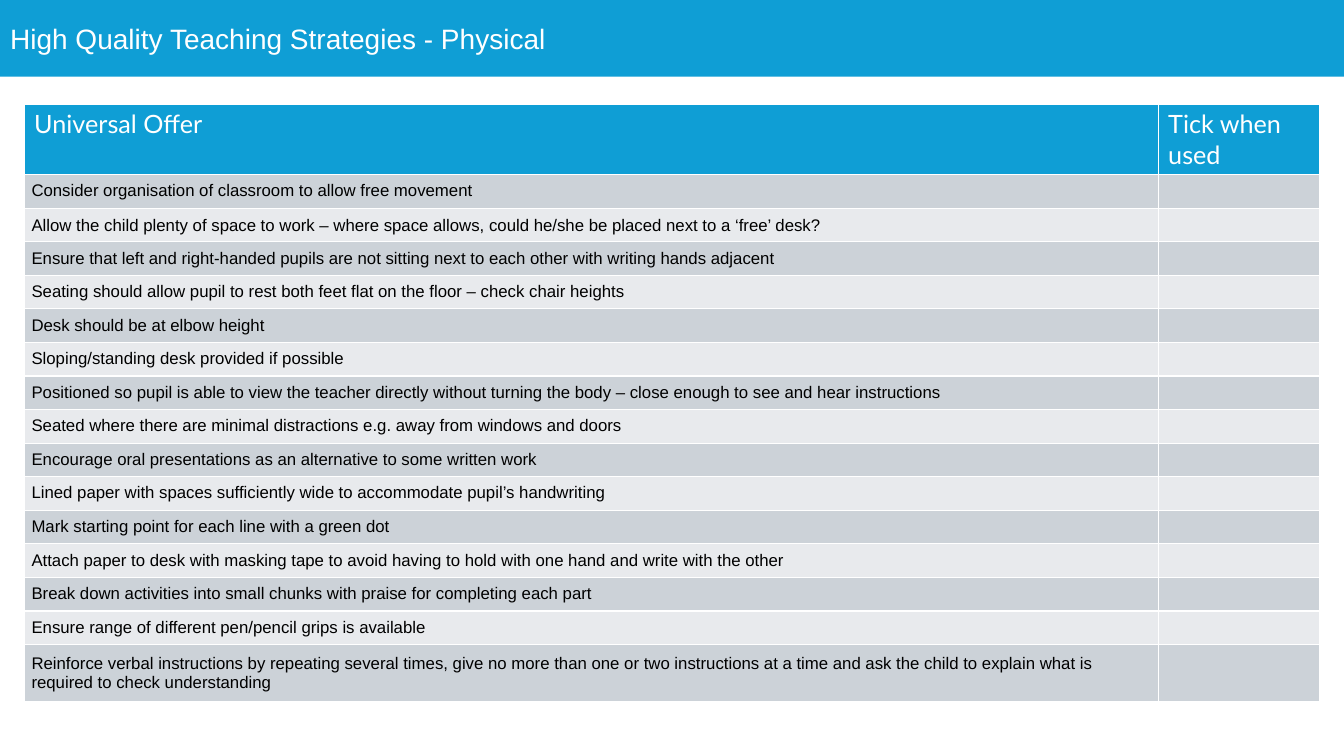
from pptx import Presentation
from pptx.dml.color import RGBColor
from pptx.enum.text import MSO_ANCHOR, MSO_AUTO_SIZE, PP_ALIGN
from pptx.util import Pt

PX = 9525  # EMU per px, 96 px to the inch

THEME = {
    "blue": RGBColor(0x0F, 0x9E, 0xD5),
    "bands": [RGBColor(0xCC, 0xD2, 0xD8), RGBColor(0xE8, 0xEA, 0xED)],
    "title": {"name": "Arial", "size": Pt(20), "bold": False, "color": RGBColor(255, 255, 255)},
    "header": {"name": "Lato", "size": Pt(18), "bold": False, "color": RGBColor(255, 255, 255)},
    "body": {"name": "Arial", "size": Pt(12), "bold": False, "color": RGBColor(0, 0, 0)},
}

HEADERS = ["Universal Offer", "Tick when used"]
TIGHT, LOOSE = Pt(12.8), Pt(13.8)
STRATEGIES = [
    ("Consider organisation of classroom to allow free movement", TIGHT),
    ("Allow the child plenty of space to work – where space allows, could he/she be placed "
     "next to a ‘free’ desk?", LOOSE),
    ("Ensure that left and right-handed pupils are not sitting next to each other with "
     "writing hands adjacent", LOOSE),
    ("Seating should allow pupil to rest both feet flat on the floor – check chair heights", TIGHT),
    ("Desk should be at elbow height", TIGHT),
    ("Sloping/standing desk provided if possible", TIGHT),
    ("Positioned so pupil is able to view the teacher directly without turning the body – "
     "close enough to see and hear instructions", LOOSE),
    ("Seated where there are minimal distractions e.g. away from windows and doors", TIGHT),
    ("Encourage oral presentations as an alternative to some written work", TIGHT),
    ("Lined paper with spaces sufficiently wide to accommodate pupil’s handwriting", TIGHT),
    ("Mark starting point for each line with a green dot", TIGHT),
    ("Attach paper to desk with masking tape to avoid having to hold with one hand and "
     "write with the other", LOOSE),
    ("Break down activities into small chunks with praise for completing each part", TIGHT),
    ("Ensure range of different pen/pencil grips is available", TIGHT),
    ("Reinforce verbal instructions by repeating several times, give no more than one or two "
     "instructions at a time and ask the child to explain what is required to check "
     "understanding", LOOSE),
]
COLUMN_WIDTHS = [1080, 154]
ROW_HEIGHTS = [67] + [32] * (len(STRATEGIES) - 1) + [54]


def write(para, text, style):
    """Add text to the paragraph as one run in a theme style."""
    span = para.add_run()
    span.text = text
    for name, value in style.items():
        if name == "color":
            span.font.color.rgb = value
        else:
            setattr(span.font, name, value)


def fill(target, color):
    target.fill.solid()
    target.fill.fore_color.rgb = color


deck = Presentation()
deck.slide_width, deck.slide_height = 1280 * PX, 720 * PX
page = deck.slides.add_slide(deck.slide_layouts[5])

# Title band
title = page.shapes.title
title.left, title.top, title.width, title.height = 0, 0, 1280 * PX, 73 * PX
fill(title, THEME["blue"])
frame = title.text_frame
frame.auto_size = MSO_AUTO_SIZE.NONE
frame.vertical_anchor = MSO_ANCHOR.MIDDLE
heading = frame.paragraphs[0]
heading.alignment = PP_ALIGN.LEFT
write(heading, "High Quality Teaching Strategies - Physical", THEME["title"])

# Checklist table
checklist = page.shapes.add_table(
    len(ROW_HEIGHTS), len(COLUMN_WIDTHS),
    23 * PX, 99 * PX, sum(COLUMN_WIDTHS) * PX, sum(ROW_HEIGHTS) * PX,
).table
for column, width in zip(checklist.columns, COLUMN_WIDTHS):
    column.width = width * PX
for row, height in zip(checklist.rows, ROW_HEIGHTS):
    row.height = height * PX

for index, text in enumerate(HEADERS):
    cell = checklist.cell(0, index)
    fill(cell, THEME["blue"])
    write(cell.text_frame.paragraphs[0], text, THEME["header"])

BODY_CELL = {"margin_left": 7 * PX, "margin_right": 0, "margin_top": 0, "margin_bottom": 0,
             "vertical_anchor": MSO_ANCHOR.MIDDLE}
for index, (text, spacing) in enumerate(STRATEGIES):
    row = checklist.rows[index + 1]
    for cell in row.cells:
        fill(cell, THEME["bands"][index % 2])
        for name, value in BODY_CELL.items():
            setattr(cell, name, value)
    para = row.cells[0].text_frame.paragraphs[0]
    para.line_spacing = spacing
    write(para, text, THEME["body"])

deck.save("out.pptx")
